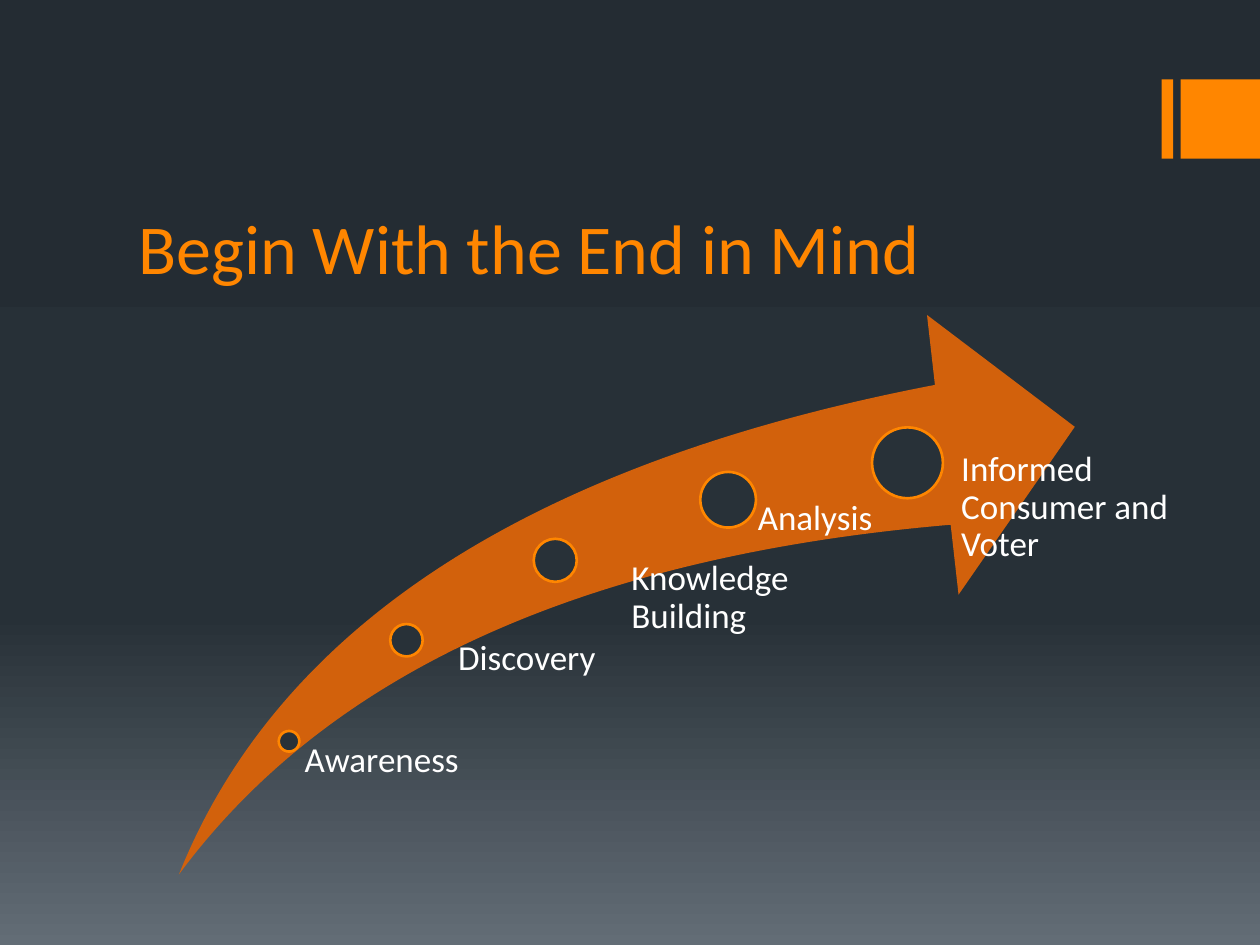
from copy import deepcopy
from dataclasses import dataclass

from pptx import Presentation
from pptx import util as u
from pptx.dml.color import RGBColor
from pptx.enum import shapes, text
from pptx.oxml.ns import qn


@dataclass(frozen=True)
class Theme:
    font: str = "Calibri"
    accent: str = "FF8600"
    swoosh: str = "D2610C"
    dot: str = "283138"
    label: str = "FFFFFF"
    backdrop: tuple = ((0, "242C33"), (0.65, "273037"), (1, "636D76"))
    title_size: float = 40
    label_size: float = 20
    ring_width: float = 1.5


@dataclass(frozen=True)
class Box:
    left: float
    top: float
    width: float
    height: float

    def lengths(self) -> list:
        return [u.Pt(n) for n in (self.left, self.top, self.width, self.height)]


@dataclass(frozen=True)
class Stage:
    name: str
    dot_left: float
    dot_top: float
    diameter: float
    label: Box
    inset: float


THEME = Theme()
SWOOSH = Box(102.24, 180, 511.92, 319.68)
TABS = (Box(663.84, 45.36, 6.48, 45.36), Box(674.64, 45.36, 45.36, 45.36))
STAGES = (
    Stage("Awareness", 159.3, 417.7, 11.8, Box(167.76, 424.1, 154.1, 76.3), 6.3),
    Stage("Discovery", 223, 356.6, 18.5, Box(252, 365.8, 122.4, 133.9), 9.8),
    Stage("Knowledge Building", 305, 307.9, 24.6, Box(347.8, 320.4, 130.3, 180), 13),
    Stage("Analysis", 400.2, 269.7, 31.8, Box(416.2, 285.8, 102.2, 214.6), 16.8),
    Stage("Informed Consumer and Voter", 498.3, 244.2, 40.5,
          Box(527.8, 257.8, 154.1, 235.4), 21.5),
)


def apply(target, values: dict) -> None:
    for name, value in values.items():
        setattr(target, name, value)


def paint_backdrop(slide) -> None:
    fill = slide.background.fill
    fill.gradient()
    fill.gradient_angle = 270
    stops = slide.element.find(".//" + qn("a:gsLst"))
    stops.append(deepcopy(stops[-1]))
    for stop, (position, color) in zip(fill.gradient_stops, THEME.backdrop):
        stop.position = position
        stop.color.rgb = RGBColor.from_string(color)


def add_solid(parent, preset: shapes.MSO_SHAPE, box: Box, color: str):
    solid = parent.add_shape(preset, *box.lengths())
    solid.shadow.inherit = False
    solid.fill.solid()
    solid.fill.fore_color.rgb = RGBColor.from_string(color)
    solid.line.fill.background()
    return solid


def write(frame, words: str, size: float, color: str, frame_format: dict,
          paragraph_format: dict) -> None:
    apply(frame, {"word_wrap": True, "auto_size": text.MSO_AUTO_SIZE.NONE,
                  **frame_format})
    paragraph = frame.paragraphs[0]
    apply(paragraph, {"alignment": text.PP_ALIGN.LEFT, **paragraph_format})
    run = paragraph.add_run()
    run.text = words
    apply(run.font, {"name": THEME.font, "size": u.Pt(size)})
    run.font.color.rgb = RGBColor.from_string(color)


def add_title(slide, words: str, box: Box) -> None:
    title = slide.shapes.title
    apply(title, dict(zip(("left", "top", "width", "height"), box.lengths())))
    write(title.text_frame, words, THEME.title_size, THEME.accent,
          {"vertical_anchor": text.MSO_ANCHOR.BOTTOM}, {})


def add_stage(parent, stage: Stage) -> None:
    circle = Box(stage.dot_left, stage.dot_top, stage.diameter, stage.diameter)
    dot = add_solid(parent, shapes.MSO_SHAPE.OVAL, circle, THEME.dot)
    dot.line.color.rgb = RGBColor.from_string(THEME.accent)
    dot.line.width = u.Pt(THEME.ring_width)
    label = parent.add_textbox(*stage.label.lengths())
    write(label.text_frame, stage.name, THEME.label_size, THEME.label,
          {"margin_left": u.Pt(stage.inset), "margin_top": 0,
           "margin_right": 0, "margin_bottom": 0,
           "vertical_anchor": text.MSO_ANCHOR.TOP},
          {"line_spacing": 0.9, "space_after": u.Pt(0.35 * THEME.label_size)})


def main() -> None:
    deck = Presentation()
    apply(deck, {"slide_width": u.Pt(720), "slide_height": u.Pt(540)})
    slide = deck.slides.add_slide(deck.slide_layouts[5])
    paint_backdrop(slide)
    for tab in TABS:
        add_solid(slide.shapes, shapes.MSO_SHAPE.RECTANGLE, tab, THEME.accent)
    add_title(slide, "Begin With the End in Mind", Box(72, 77.76, 576, 90.72))
    journey = slide.shapes.add_group_shape().shapes
    swoosh = add_solid(journey, shapes.MSO_SHAPE.SWOOSH_ARROW, SWOOSH, THEME.swoosh)
    swoosh.adjustments[0] = 0.25
    swoosh.adjustments[1] = 0.25
    for stage in STAGES:
        add_stage(journey, stage)
    deck.save("out.pptx")


if __name__ == "__main__":
    main()
